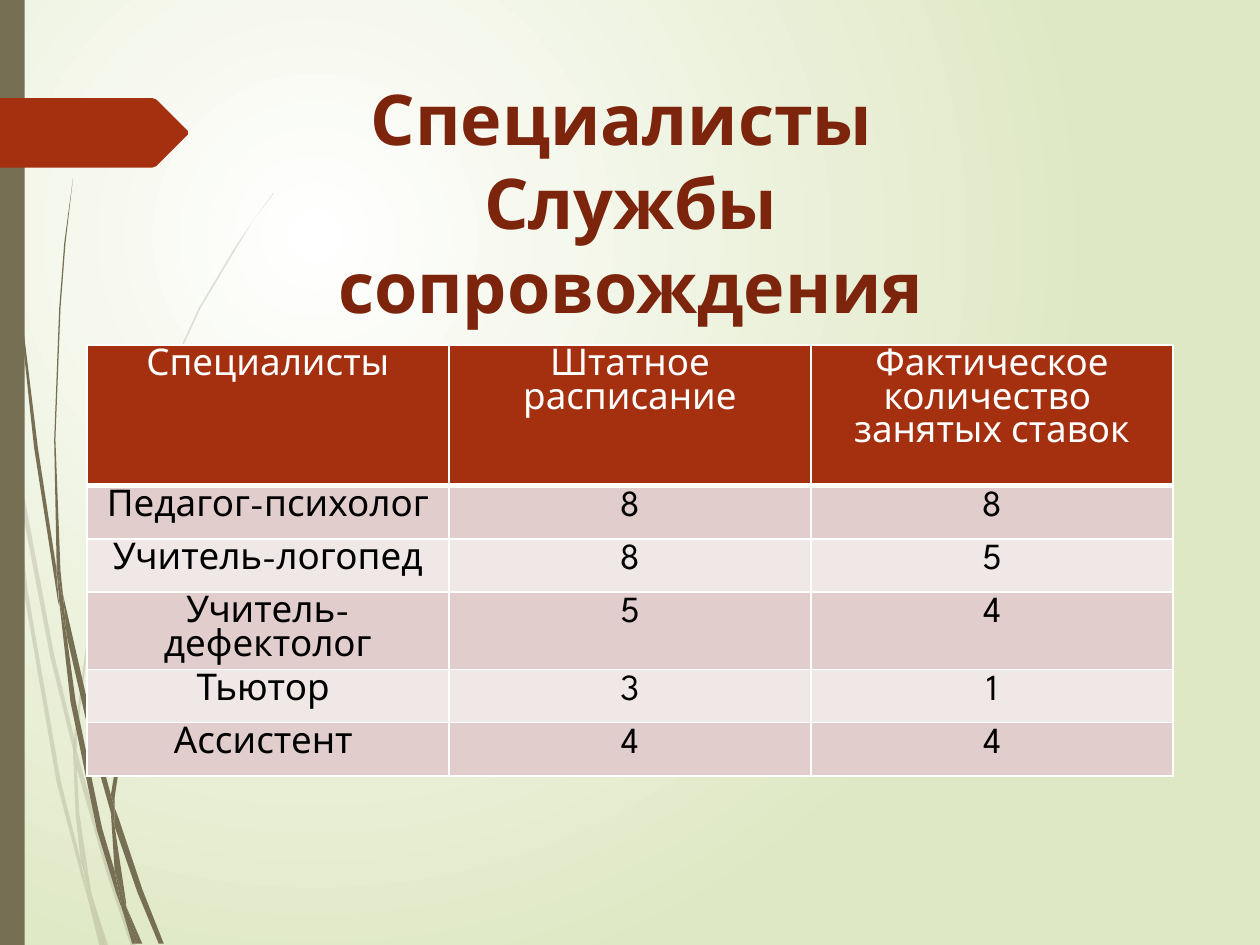
from collections import namedtuple

from lxml.etree import SubElement
from pptx import Presentation
from pptx.dml.color import RGBColor
from pptx.enum.shapes import MSO_SHAPE as Shape
from pptx.enum.text import MSO_ANCHOR as Anchor, PP_ALIGN as Align
from pptx.oxml import parse_xml
from pptx.oxml.ns import nsdecls, qn
from pptx.util import Cm, Pt

Box = namedtuple("Box", "left top width height")
FONT = "League Spartan"
COLORS = {
    "white": "FFFFFF", "black": "000000", "olive": "766F54", "rust": "A53010",
    "title": "7C240C", "green": "DFE8C4", "odd": "E1CDCC", "even": "F0E8E7",
}
GRID = Cm(0.0254)
PALE_STEMS = [
    [(8, 350), (6, 322), (0, 282), (0, 299), (7, 344)],
    [(40, 522), (59, 599), (59, 586), (43, 520), (10, 345), (12, 376)],
    [(64, 607), (61, 596), (61, 610), (85, 694), (104, 751), (108, 751), (88, 692)],
    [(83, 751), (86, 751), (73, 711)],
    [(64, 683), (48, 619), (22, 469), (12, 376), (8, 350), (19, 470), (45, 621),
     (64, 693), (70, 714), (69, 707)],
    [(58, 599), (60, 646), (64, 683), (67, 692), (73, 711), (72, 706), (63, 646),
     (61, 610), (61, 608)],
    [(61, 584), (76, 462), (111, 349), (159, 245), (187, 198), (201, 175), (217, 154),
     (217, 153), (201, 175), (186, 197), (158, 244), (110, 348), (75, 461), (59, 584),
     (59, 586), (61, 596)],
    [(70, 714), (79, 751), (82, 751)],
    [(61, 608), (61, 610), (61, 596), (59, 586), (58, 599)],
    [(67, 692), (65, 683), (69, 707), (70, 714), (82, 751), (83, 751), (73, 711)],
]
DARK_STEMS = [
    [(5, 110), (14, 233), (27, 355), (46, 477), (47, 481), (45, 457), (45, 453),
     (30, 355), (15, 232), (6, 109), (4, 48), (3, 0), (2, 0), (3, 48)],
    [(73, 592), (88, 645), (88, 633), (88, 631), (77, 590), (50, 472), (53, 505)],
    [(94, 649), (91, 641), (91, 656), (109, 708), (126, 749), (130, 749), (113, 706)],
    [(91, 691), (81, 657), (60, 556), (53, 505), (47, 477), (56, 557), (77, 659),
     (92, 708), (97, 722), (96, 717)],
    [(50, 472), (48, 453), (44, 349), (48, 245), (52, 193), (58, 141), (51, 193),
     (47, 245), (43, 349), (45, 449), (49, 472)],
    [(110, 749), (113, 749), (100, 719)],
    [(47, 477), (53, 505), (50, 472), (49, 472), (45, 449), (45, 453)],
    [(91, 633), (103, 552), (131, 476), (169, 406), (191, 374), (203, 359), (216, 344),
     (215, 344), (203, 358), (191, 373), (168, 405), (129, 474), (101, 551), (88, 631),
     (91, 641)],
    [(97, 722), (105, 749), (108, 749)],
    [(88, 645), (91, 691), (96, 706), (100, 719), (100, 716), (91, 656), (90, 651)],
    [(88, 645), (90, 651), (91, 656), (91, 641), (88, 631), (88, 633)],
    [(96, 706), (91, 691), (96, 717), (97, 722), (108, 749), (110, 749), (100, 719)],
]
ARROW = [(0, 0), (121, 0), (124, 1), (149, 26), (149, 29), (124, 54), (121, 55), (0, 55)]
ROWS = [
    ["Специалисты", "Штатное расписание", "Фактическое количество \nзанятых ставок"],
    ["Педагог-психолог", "8", "8"],
    ["Учитель-логопед", "8", "5"],
    ["Учитель-дефектолог", "5", "4"],
    ["Тьютор ", "3", "1"],
    ["Ассистент ", "4", "4"],
]


def rgb(name):
    """Return a palette colour."""
    return RGBColor.from_string(COLORS[name])


def paint(shape, color, alpha=None):
    """Give a shape a plain fill, optionally translucent (percent)."""
    shape.shadow.inherit = False
    shape.line.fill.background()
    shape.fill.solid()
    shape.fill.fore_color.rgb = rgb(color)
    if alpha:
        fill = shape._element.spPr.find(qn("a:solidFill"))
        SubElement(fill[0], qn("a:alpha"), val=str(alpha * 1000))


def draw_outline(shapes, points, box, color, alpha=None):
    """Draw a closed outline from points measured from the box corner."""
    builder = shapes.build_freeform(*points[0], scale=GRID)
    builder.add_line_segments(points[1:], close=True)
    paint(builder.convert_to_shape(box.left, box.top), color, alpha)


def style_text(frame, size, color, bold=False):
    """Centre all paragraphs and format their runs."""
    for para in frame.paragraphs:
        para.alignment = Align.CENTER
        for span in para.runs:
            span.font.name = FONT
            span.font.size = Pt(size)
            span.font.bold = bold
            span.font.color.rgb = rgb(color)


def set_background(page):
    """Fill the page with a radial gradient."""
    page.background.fill.solid()
    properties = page._element.cSld.find(qn("p:bg")).find(qn("p:bgPr"))
    properties.replace(properties[0], parse_xml(
        f'<a:gradFill {nsdecls("a")} rotWithShape="1"><a:gsLst>'
        f'<a:gs pos="0"><a:srgbClr val="{COLORS["white"]}"/></a:gs>'
        f'<a:gs pos="100000"><a:srgbClr val="{COLORS["green"]}"/></a:gs></a:gsLst>'
        '<a:path path="circle"><a:fillToRect l="50000" t="50000" r="100000" b="100000"/>'
        '</a:path></a:gradFill>'))


def add_decoration(page, box):
    """Draw the grass stems, the side bar and the arrow tab."""
    for stems, alpha in ((PALE_STEMS, 20), (DARK_STEMS, None)):
        group = page.shapes.add_group_shape()
        for stem in stems:
            draw_outline(group.shapes, stem, box, "olive", alpha)
    bar = page.shapes.add_shape(Shape.RECTANGLE, box.left, box.top, Cm(0.5), box.height)
    paint(bar, "olive")
    tab = box._replace(top=box.top + Cm(1.98))
    draw_outline(page.shapes, ARROW, tab, "rust")


def add_title(page, box):
    """Place and format the title."""
    title = page.shapes.title
    title.left, title.top, title.width, title.height = box
    frame = title.text_frame
    frame.word_wrap = True
    frame.vertical_anchor = Anchor.TOP
    frame.text = "Специалисты \vСлужбы сопровождения"
    style_text(frame, 40, "title", bold=True)


def set_borders(cell, header):
    """Draw white cell borders, thicker under the header."""
    for side in "LRTB":
        width = Pt(3 if header and side == "B" else 1)
        line = SubElement(cell._tc.get_or_add_tcPr(), qn(f"a:ln{side}"), w=str(width))
        fill = SubElement(line, qn("a:solidFill"))
        SubElement(fill, qn("a:srgbClr"), val=COLORS["white"])


def add_staff_table(page, box):
    """Place the staffing table, with a tall header row."""
    table = page.shapes.add_table(len(ROWS), len(ROWS[0]), *box).table
    header_height = Cm(2.84)
    for column in table.columns:
        column.width = box.width // len(ROWS[0])
    for i, values in enumerate(ROWS):
        header = i == 0
        body_height = (box.height - header_height) // (len(ROWS) - 1)
        table.rows[i].height = header_height if header else body_height
        for j, value in enumerate(values):
            cell = table.cell(i, j)
            cell.margin_left = cell.margin_right = Cm(0.18)
            cell.margin_top = cell.margin_bottom = Cm(0.1)
            set_borders(cell, header)
            cell.fill.solid()
            cell.fill.fore_color.rgb = rgb("rust" if header else "odd" if i % 2 else "even")
            cell.text_frame.text = value
            style_text(cell.text_frame, 21, "white" if header else "black")


def main():
    """Build the deck."""
    deck = Presentation()
    deck.slide_width, deck.slide_height = Cm(25.4), Cm(19.05)
    page = deck.slides.add_slide(deck.slide_layouts[5])
    set_background(page)
    add_decoration(page, Box(0, 0, deck.slide_width, deck.slide_height))
    add_title(page, Box(Cm(3.56), Cm(1.4), Cm(18.31), Cm(3.56)))
    add_staff_table(page, Box(Cm(1.75), Cm(6.95), Cm(21.9), Cm(8.2)))
    deck.save("out.pptx")


if __name__ == "__main__":
    main()
